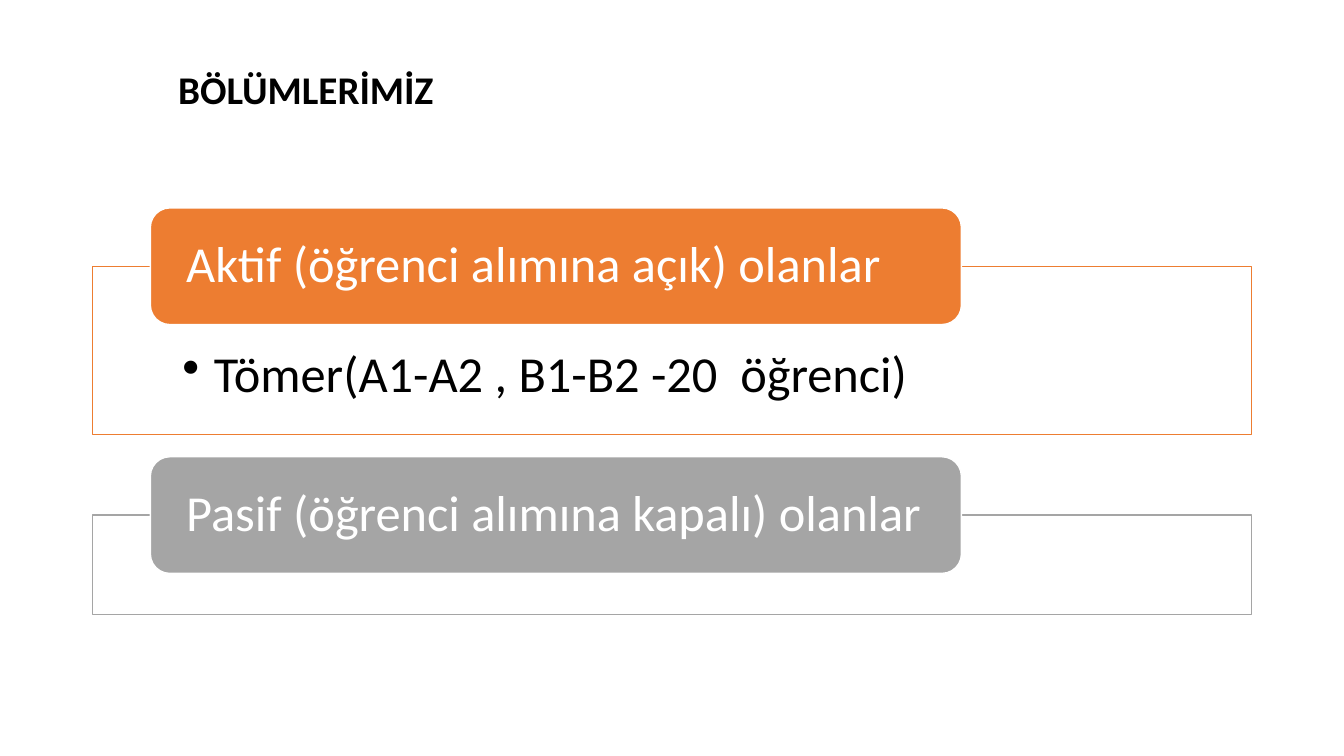
import pptx
import pptx.util
import pptx.dml.color
import pptx.enum.shapes
import pptx.enum.text
import pptx.oxml.ns
import lxml.etree

Cm = pptx.util.Cm
Pt = pptx.util.Pt
RGBColor = pptx.dml.color.RGBColor
Shapes = pptx.enum.shapes.MSO_SHAPE
Anchor = pptx.enum.text.MSO_ANCHOR
qn = pptx.oxml.ns.qn

BLACK = RGBColor(0x00, 0x00, 0x00)
WHITE = RGBColor(0xFF, 0xFF, 0xFF)
ORANGE = RGBColor(0xED, 0x7D, 0x31)
GRAY = RGBColor(0xA5, 0xA5, 0xA5)

# Lengths in centimetres
FRAME_LEFT, FRAME_WIDTH = 2.33, 29.21
HEADER_LEFT, HEADER_WIDTH, HEADER_HEIGHT = 3.79, 20.44, 2.94
FIRST_TOP, SECTION_GAP = 5.24, 0.56
BULLET_INDENT = 0.79

# Heading, colour, frame height, bullet text
SECTIONS = [
    ("Aktif (öğrenci alımına açık) olanlar", ORANGE, 4.24,
     "Tömer(A1-A2 , B1-B2 -20  öğrenci)"),
    ("Pasif (öğrenci alımına kapalı) olanlar", GRAY, 2.51, None),
]


def write_text(shape, text, size, color, anchor, margins, bold=False, bullet=False):
    frame = shape.text_frame
    frame.text = text
    frame.word_wrap = True
    frame.vertical_anchor = anchor
    (frame.margin_left, frame.margin_top,
     frame.margin_right, frame.margin_bottom) = [Cm(margin) for margin in margins]
    paragraph = frame.paragraphs[0]
    paragraph.alignment = pptx.enum.text.PP_ALIGN.LEFT
    paragraph.line_spacing = 0.9
    if bullet:
        properties = paragraph._p.get_or_add_pPr()
        properties.set("marL", str(Cm(BULLET_INDENT)))
        properties.set("indent", str(-Cm(BULLET_INDENT)))
        lxml.etree.SubElement(properties, qn("a:buChar")).set("char", "•")
    font = paragraph.runs[0].font
    font.name = "Calibri"
    font.size = Pt(size)
    font.bold = bold
    font.color.rgb = color


def add_block(slide, kind, left, top, width, height, fill, line):
    shape = slide.shapes.add_shape(kind, Cm(left), Cm(top), Cm(width), Cm(height))
    shape.shadow.inherit = False
    shape.fill.solid()
    shape.fill.fore_color.rgb = fill
    shape.line.color.rgb = line
    shape.line.width = Pt(1)
    return shape


def add_title(slide, text):
    box = slide.shapes.add_textbox(Cm(4.24), Cm(1.02), Cm(20.52), Cm(2.59))
    write_text(box, text, 28, BLACK, Anchor.MIDDLE, (0.25, 0.13, 0.25, 0.13), bold=True)


def add_section(slide, top, heading, color, frame_height, item):
    """Draw a frame with a header across its top edge; return the frame's bottom."""
    frame_top = top + HEADER_HEIGHT / 2
    frame = add_block(slide, Shapes.RECTANGLE, FRAME_LEFT, frame_top,
                      FRAME_WIDTH, frame_height, WHITE, color)
    if item:
        write_text(frame, item, 36, BLACK, Anchor.TOP, (2.27, 2.08, 2.27, 0.72), bullet=True)
    header = add_block(slide, Shapes.ROUNDED_RECTANGLE, HEADER_LEFT, top,
                       HEADER_WIDTH, HEADER_HEIGHT, color, WHITE)
    write_text(header, heading, 36, WHITE, Anchor.MIDDLE, (0.76, 0, 0.76, 0))
    return frame_top + frame_height


def main():
    presentation = pptx.Presentation()
    presentation.slide_width = Cm(33.87)
    presentation.slide_height = Cm(19.05)
    slide = presentation.slides.add_slide(presentation.slide_layouts[6])

    # Title
    add_title(slide, "BÖLÜMLERİMİZ")

    # Stacked sections
    top = FIRST_TOP
    for section in SECTIONS:
        top = add_section(slide, top, *section) + SECTION_GAP

    presentation.save("out.pptx")


if __name__ == "__main__":
    main()
